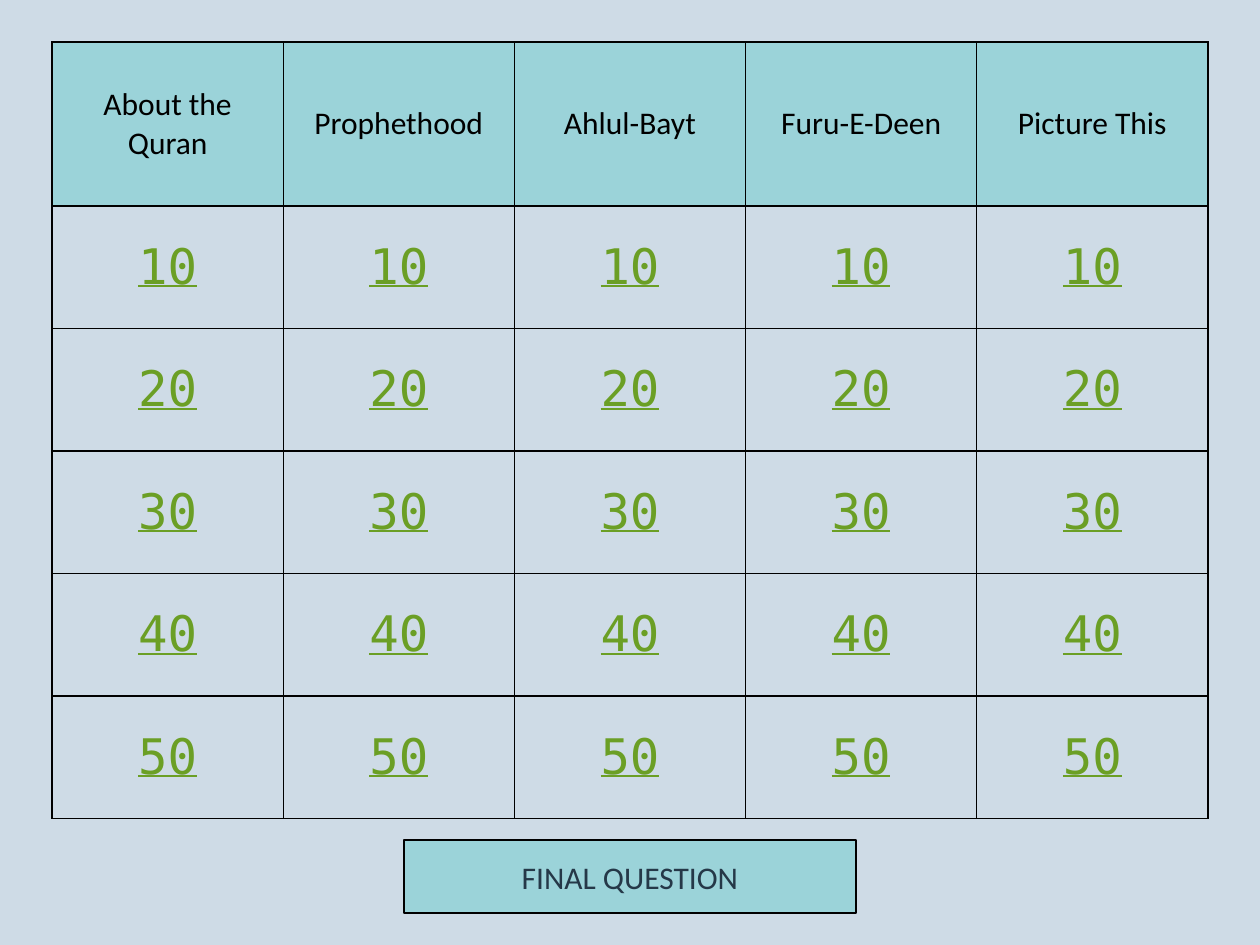
from dataclasses import dataclass

from lxml.etree import SubElement
from pptx import Presentation
from pptx.dml.color import RGBColor as RGB
from pptx.enum.shapes import MSO_SHAPE as Shape
from pptx.enum.text import MSO_ANCHOR as Anchor, PP_ALIGN as Align
from pptx.oxml.ns import qn
from pptx.util import Cm, Pt

CATEGORIES = ["About the Quran", "Prophethood", "Ahlul-Bayt", "Furu-E-Deen", "Picture This"]
POINTS = [10, 20, 30, 40, 50]
FINAL_ROUND = "FINAL QUESTION"


@dataclass(frozen=True)
class Theme:
    background: str = "CEDBE6"
    panel: str = "9BD3D9"
    outline: str = "000000"
    outline_width: int = 1
    category: tuple = ("Calibri", 18, "000000", False)
    points: tuple = ("DejaVu Sans Mono", 28, "6B9F25", True)
    final: tuple = ("Calibri", 18, "253848", False)


THEME = Theme()
SLIDE_WIDTH, SLIDE_HEIGHT = Cm(25.4), Cm(19.05)
BOARD_TOP, COLUMN_WIDTH = Cm(0.85), Cm(4.66)
CATEGORY_HEIGHT, POINTS_HEIGHT = Cm(3.3), Cm(2.47)
FINAL_TOP, FINAL_WIDTH, FINAL_HEIGHT = Cm(16.93), Cm(9.11), Cm(1.48)


def paint(fill, color):
    fill.solid()
    fill.fore_color.rgb = RGB.from_string(color)


def write(frame, text, style):
    family, size, color, underlined = style
    paragraph = frame.paragraphs[0]
    paragraph.alignment = Align.CENTER
    run = paragraph.add_run()
    run.text = text
    run.font.name = family
    run.font.size = Pt(size)
    run.font.underline = underlined
    run.font.color.rgb = RGB.from_string(color)


def outline_cell(cell):
    properties = cell._tc.get_or_add_tcPr()
    for side in ("lnL", "lnR", "lnT", "lnB"):
        line = SubElement(properties, qn(f"a:{side}"), w=str(Pt(THEME.outline_width)))
        solid = SubElement(line, qn("a:solidFill"))
        SubElement(solid, qn("a:srgbClr"), val=THEME.outline)


def add_board(slide):
    rows = [CATEGORIES] + [[str(value)] * len(CATEGORIES) for value in POINTS]
    heights = [CATEGORY_HEIGHT] + [POINTS_HEIGHT] * len(POINTS)
    width = COLUMN_WIDTH * len(CATEGORIES)
    board = slide.shapes.add_table(
        len(rows), len(CATEGORIES), (SLIDE_WIDTH - width) // 2, BOARD_TOP, width, sum(heights)
    ).table
    board.first_row = board.horz_banding = False
    for column in board.columns:
        column.width = COLUMN_WIDTH
    for r, (texts, height) in enumerate(zip(rows, heights)):
        board.rows[r].height = height
        for c, text in enumerate(texts):
            cell = board.cell(r, c)
            cell.vertical_anchor = Anchor.MIDDLE
            outline_cell(cell)
            if r == 0:
                paint(cell.fill, THEME.panel)
            else:
                cell.fill.background()
            write(cell.text_frame, text, THEME.points if r else THEME.category)


def add_final_round(slide):
    final = slide.shapes.add_shape(
        Shape.RECTANGLE, (SLIDE_WIDTH - FINAL_WIDTH) // 2, FINAL_TOP, FINAL_WIDTH, FINAL_HEIGHT
    )
    final.shadow.inherit = False
    paint(final.fill, THEME.panel)
    paint(final.line.fill, THEME.outline)
    final.line.width = Pt(THEME.outline_width)
    final.text_frame.vertical_anchor = Anchor.MIDDLE
    write(final.text_frame, FINAL_ROUND, THEME.final)


def main():
    deck = Presentation()
    deck.slide_width, deck.slide_height = SLIDE_WIDTH, SLIDE_HEIGHT
    slide = deck.slides.add_slide(deck.slide_layouts[6])
    paint(slide.background.fill, THEME.background)
    add_board(slide)
    add_final_round(slide)
    deck.save("out.pptx")


if __name__ == "__main__":
    main()
